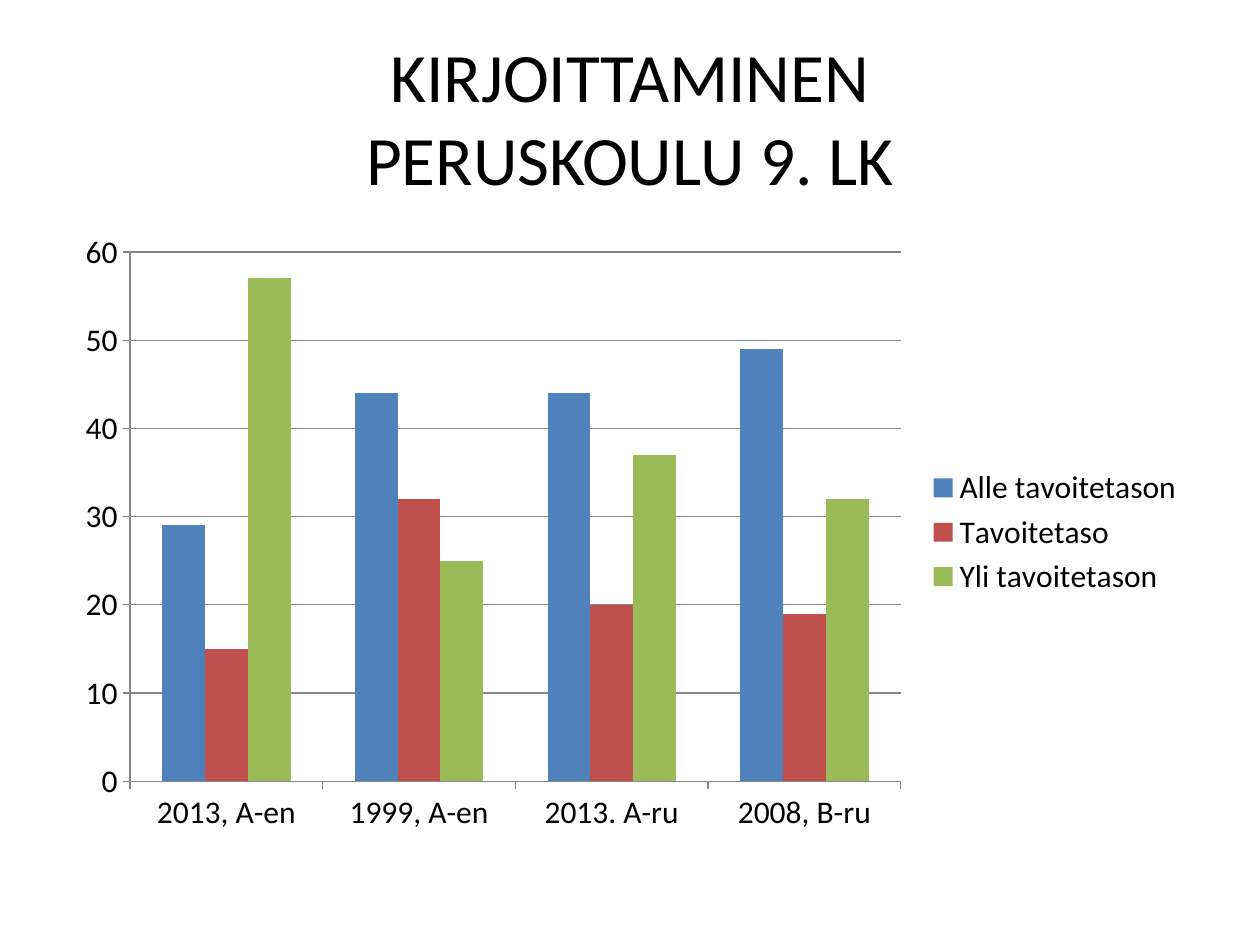
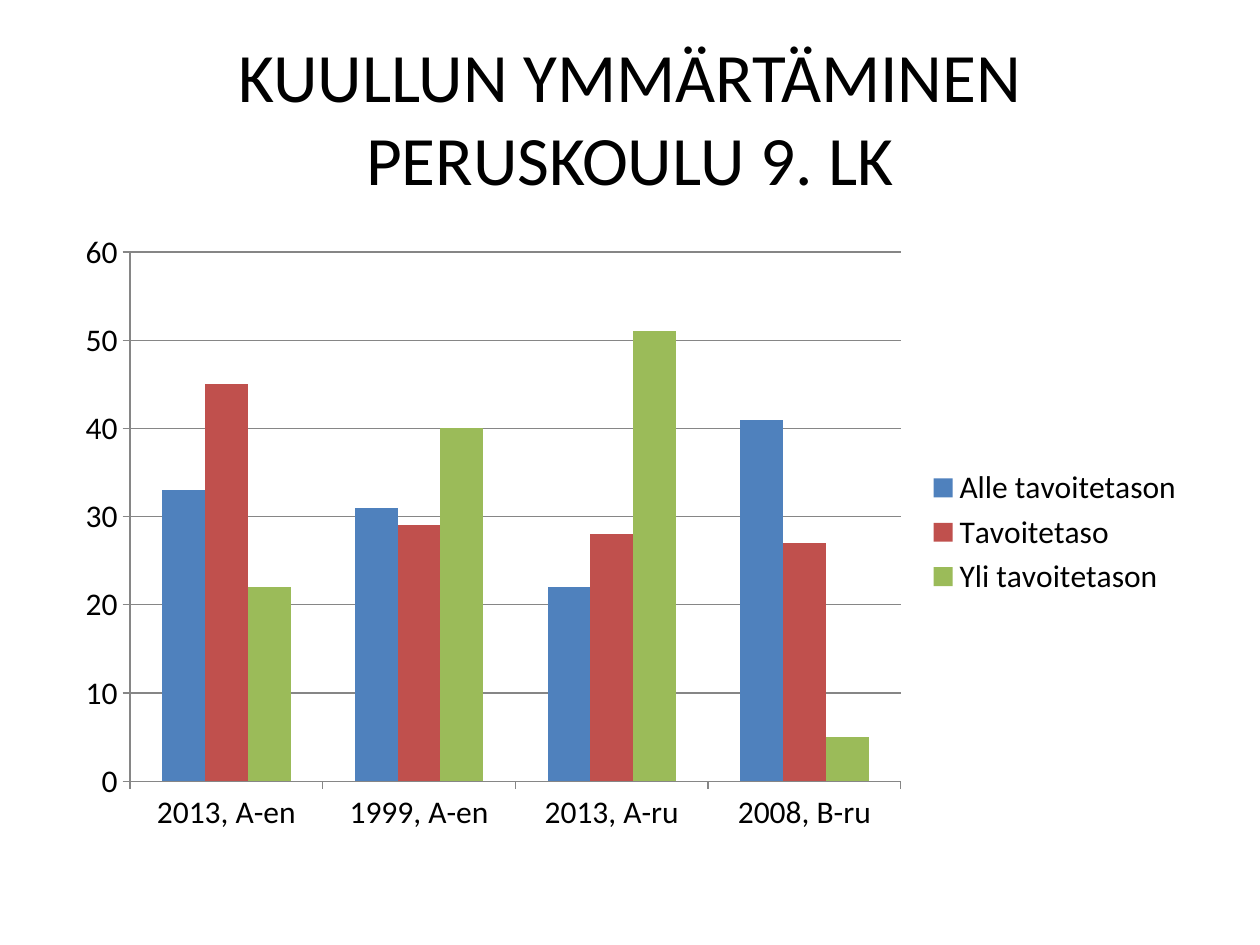
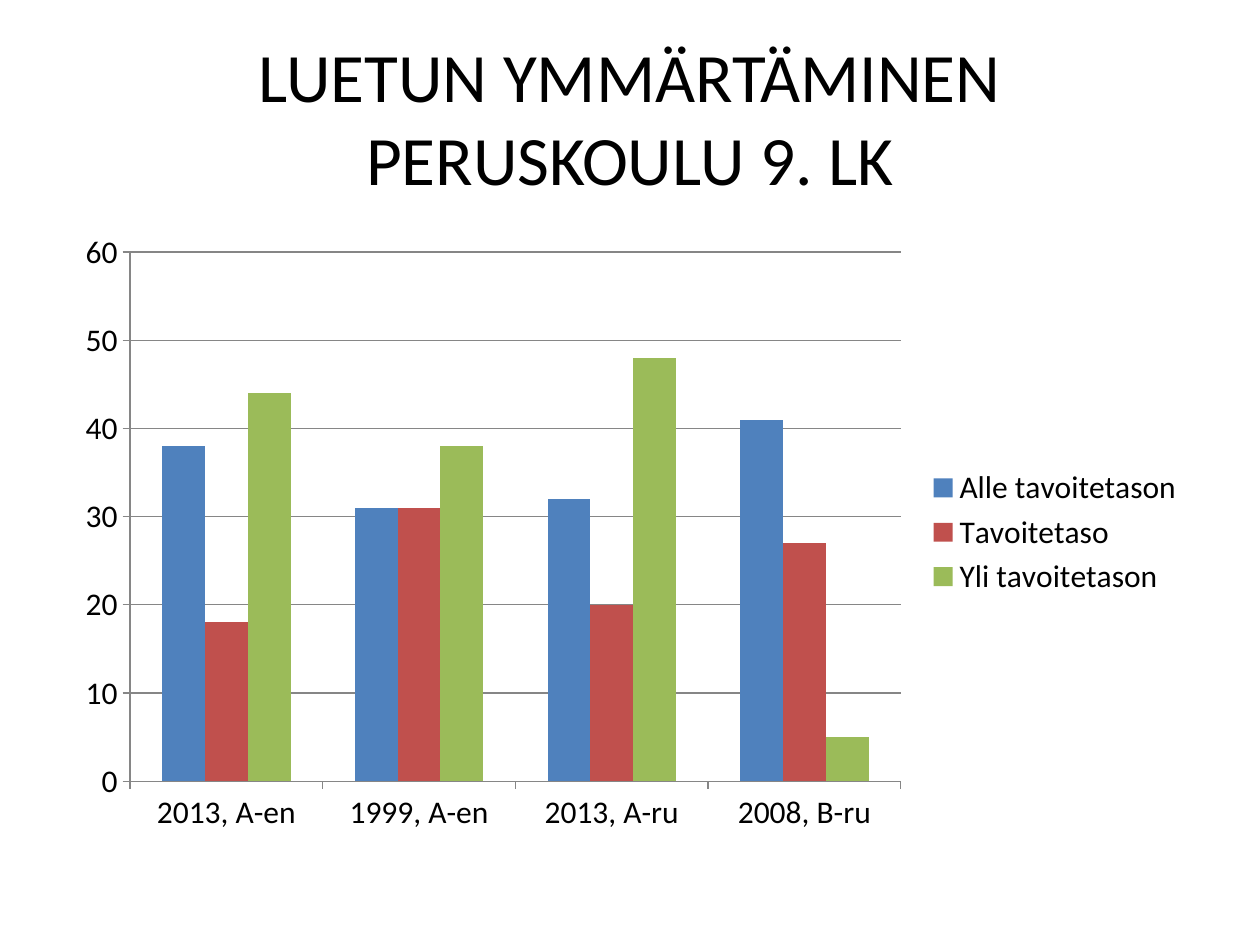
from pptx import Presentation
from pptx.chart.data import CategoryChartData
from pptx.dml.color import RGBColor
from pptx.enum.chart import XL_CHART_TYPE, XL_LEGEND_POSITION, XL_TICK_MARK
from pptx.enum.text import MSO_ANCHOR, PP_ALIGN
from pptx.util import Inches, Pt

GRADE = "PERUSKOULU 9. LK"
LEVELS = [
    ("Alle tavoitetason", "4F81BD"),
    ("Tavoitetaso", "C0504D"),
    ("Yli tavoitetason", "9BBB59"),
]
GROUPS = ["2013, A-en", "1999, A-en", "2013, A-ru", "2008, B-ru"]
# One row of values per level, in the order of LEVELS
SKILLS = [
    ("KIRJOITTAMINEN",
     ["2013, A-en", "1999, A-en", "2013. A-ru", "2008, B-ru"],
     [(29, 44, 44, 49), (15, 32, 20, 19), (57, 25, 37, 32)]),
    ("KUULLUN YMMÄRTÄMINEN", GROUPS,
     [(33, 31, 22, 41), (45, 29, 28, 27), (22, 40, 51, 5)]),
    ("LUETUN YMMÄRTÄMINEN", GROUPS,
     [(38, 31, 32, 41), (18, 31, 20, 27), (44, 38, 48, 5)]),
]

INK, GRID = "000000", "868686"
TITLE_BOX = [Inches(n) for n in (0.5, 0.3, 9, 1.25)]
CHART_BOX = [Inches(n) for n in (0.5, 1.75, 9, 4.95)]


def color(code):
    return RGBColor.from_string(code)


def assign(item, **values):
    for name, value in values.items():
        setattr(item, name, value)


def style_font(font, size):
    assign(font, name="Calibri", size=Pt(size), bold=False)
    font.color.rgb = color(INK)


def style_line(line):
    line.color.rgb = color(GRID)
    line.width = Pt(0.75)


def add_title(slide, skill):
    frame = slide.shapes.add_textbox(*TITLE_BOX).text_frame
    assign(frame, word_wrap=True, vertical_anchor=MSO_ANCHOR.MIDDLE)
    title = frame.paragraphs[0]
    assign(title, text=f"{skill}\v{GRADE}", alignment=PP_ALIGN.CENTER)
    style_font(title.font, 39.6)


def add_levels(slide, groups, rows):
    """Add the column chart of results by level."""
    data = CategoryChartData(number_format="General")
    data.categories = groups
    for (name, _), row in zip(LEVELS, rows):
        data.add_series(name, row)
    chart = slide.shapes.add_chart(
        XL_CHART_TYPE.COLUMN_CLUSTERED, *CHART_BOX, data).chart
    assign(chart, has_title=False, has_legend=True)
    style_font(chart.font, 18)
    assign(chart.legend, position=XL_LEGEND_POSITION.RIGHT,
           include_in_layout=False)

    plot = chart.plots[0]
    assign(plot, gap_width=150, overlap=0, vary_by_categories=False)
    for series, (_, code) in zip(plot.series, LEVELS):
        series.invert_if_negative = False
        series.format.fill.solid()
        series.format.fill.fore_color.rgb = color(code)

    for axis in (chart.category_axis, chart.value_axis):
        assign(axis, major_tick_mark=XL_TICK_MARK.OUTSIDE,
               minor_tick_mark=XL_TICK_MARK.NONE)
        style_line(axis.format.line)
    assign(chart.value_axis, minimum_scale=0, maximum_scale=60,
           major_unit=10, has_major_gridlines=True)
    style_line(chart.value_axis.major_gridlines.format.line)


def main():
    deck = Presentation()
    assign(deck, slide_width=Inches(10), slide_height=Inches(7.5))
    for skill, groups, rows in SKILLS:
        slide = deck.slides.add_slide(deck.slide_layouts[6])
        add_title(slide, skill)
        add_levels(slide, groups, rows)
    deck.save("out.pptx")


if __name__ == "__main__":
    main()
